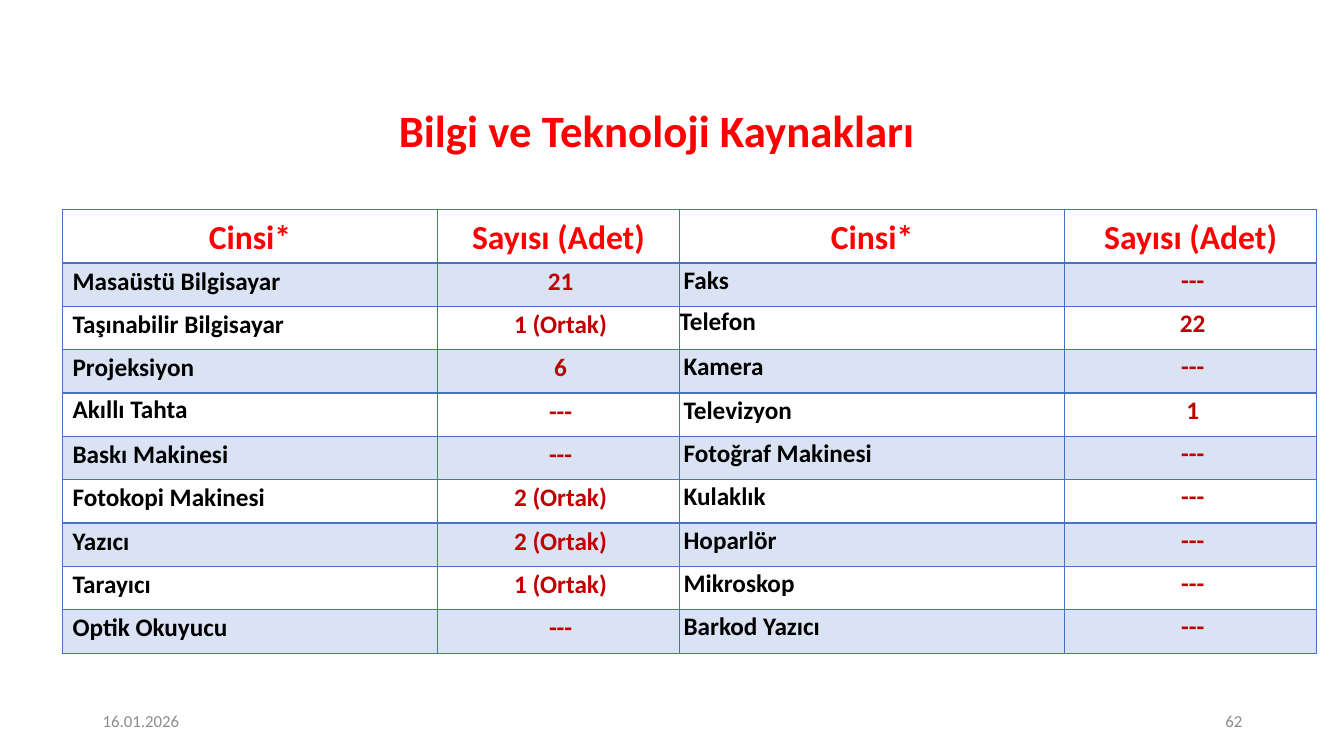
from lxml import etree
from pptx import Presentation
from pptx.dml.color import RGBColor
from pptx.enum.text import MSO_ANCHOR, PP_ALIGN
from pptx.oxml.ns import qn
from pptx.util import Inches, Pt

LEFT, CENTER, RIGHT = PP_ALIGN.LEFT, PP_ALIGN.CENTER, PP_ALIGN.RIGHT
TOP, MIDDLE = MSO_ANCHOR.TOP, MSO_ANCHOR.MIDDLE
FONT = "Calibri"
COLORS = {
    "heading": "FF0000",
    "item": "000000",
    "count": "C00000",
    "border": "4472C4",
    "band": "DAE3F3",
    "white": "FFFFFF",
    "footer": "8C8C8C",
}
COL_WIDTHS = [3.72, 2.4, 3.82, 2.5]
HEADER_HEIGHT, ROW_HEIGHT = 0.53, 0.43
HEADER = ["Cinsi*", "Sayısı (Adet)"] * 2
RESOURCES = [
    ["Masaüstü Bilgisayar", "21", "Faks", "---"],
    ["Taşınabilir Bilgisayar", "1 (Ortak)", "Telefon", "22"],
    ["Projeksiyon", "6", "Kamera", "---"],
    ["Akıllı Tahta", "---", "Televizyon", "1"],
    ["Baskı Makinesi", "---", "Fotoğraf Makinesi", "---"],
    ["Fotokopi Makinesi", "2 (Ortak)", "Kulaklık", "---"],
    ["Yazıcı", "2 (Ortak)", "Hoparlör", "---"],
    ["Tarayıcı", "1 (Ortak)", "Mikroskop", "---"],
    ["Optik Okuyucu", "---", "Barkod Yazıcı", "---"],
]
SINGLE_SPACED = {"Telefon", "Akıllı Tahta"}
UNINDENTED = {"Telefon"}


def write(tf, text, size, color, align=LEFT, bold=False):
    tf.text = text
    p = tf.paragraphs[0]
    p.alignment = align
    font = p.runs[0].font
    font.name, font.size, font.bold = FONT, Pt(size), bold
    font.color.rgb = RGBColor.from_string(COLORS[color])
    return p


def add_title(slide, text):
    title = slide.shapes.title
    title.left, title.top = Inches(0.29), Inches(0.95)
    title.width, title.height = Inches(12.45), Inches(0.73)
    title.text_frame.vertical_anchor = MIDDLE
    p = write(title.text_frame, text, 32, "heading", CENTER, True)
    p.line_spacing = 0.9


def add_footer(slide, left, text, align):
    box = slide.shapes.add_textbox(Inches(left), Inches(6.95), Inches(3), Inches(0.4))
    tf = box.text_frame
    tf.word_wrap = True
    tf.vertical_anchor = MIDDLE
    write(tf, text, 12, "footer", align)


def set_borders(cell, widths):
    """Draw the cell's borders; widths maps a side (L, R, T, B) to points."""
    tcPr = cell._tc.get_or_add_tcPr()
    for side, width in widths.items():
        ln = etree.SubElement(tcPr, qn(f"a:ln{side}"), w=str(Pt(width)))
        fill = etree.SubElement(ln, qn("a:solidFill"))
        etree.SubElement(fill, qn("a:srgbClr"), val=COLORS["border"])


def format_cell(cell, text, row, col):
    is_header, is_count = row == 0, col % 2 == 1
    side, top = (0.06, 0.01) if col < 2 else (0, 0)
    cell.margin_left = cell.margin_right = Inches(side)
    cell.margin_top, cell.margin_bottom = Inches(top), 0
    cell.vertical_anchor = MIDDLE if is_header else TOP
    set_borders(cell, {"L": 1, "R": 1, "T": 2 if row == 1 else 1, "B": 2 if is_header else 1})
    cell.fill.solid()
    cell.fill.fore_color.rgb = RGBColor.from_string(COLORS["band" if row % 2 else "white"])

    color = "heading" if is_header else "count" if is_count else "item"
    align = CENTER if is_header or is_count else LEFT
    p = write(cell.text_frame, text, 24 if is_header else 18, color, align, True)
    if text not in SINGLE_SPACED:
        p.line_spacing, p.space_after = 1.07, Pt(8)
    if not is_header and text not in UNINDENTED:
        p._p.get_or_add_pPr().set("marL", str(Inches(0.04)))


def add_resource_table(slide):
    rows = [HEADER] + RESOURCES
    height = HEADER_HEIGHT + ROW_HEIGHT * len(RESOURCES)
    frame = slide.shapes.add_table(
        len(rows), len(HEADER), Inches(0.62), Inches(2.08), Inches(sum(COL_WIDTHS)), Inches(height)
    )
    table = frame.table
    for column, width in zip(table.columns, COL_WIDTHS):
        column.width = Inches(width)
    for r, texts in enumerate(rows):
        table.rows[r].height = Inches(ROW_HEIGHT if r else HEADER_HEIGHT)
        for c, text in enumerate(texts):
            format_cell(table.cell(r, c), text, r, c)


def main():
    prs = Presentation()
    prs.slide_width, prs.slide_height = Inches(13.33), Inches(7.5)
    slide = prs.slides.add_slide(prs.slide_layouts[5])
    add_title(slide, "Bilgi ve Teknoloji Kaynakları")
    add_resource_table(slide)
    add_footer(slide, 0.92, "16.01.2026", LEFT)
    add_footer(slide, 9.42, "62", RIGHT)
    prs.save("out.pptx")


if __name__ == "__main__":
    main()
